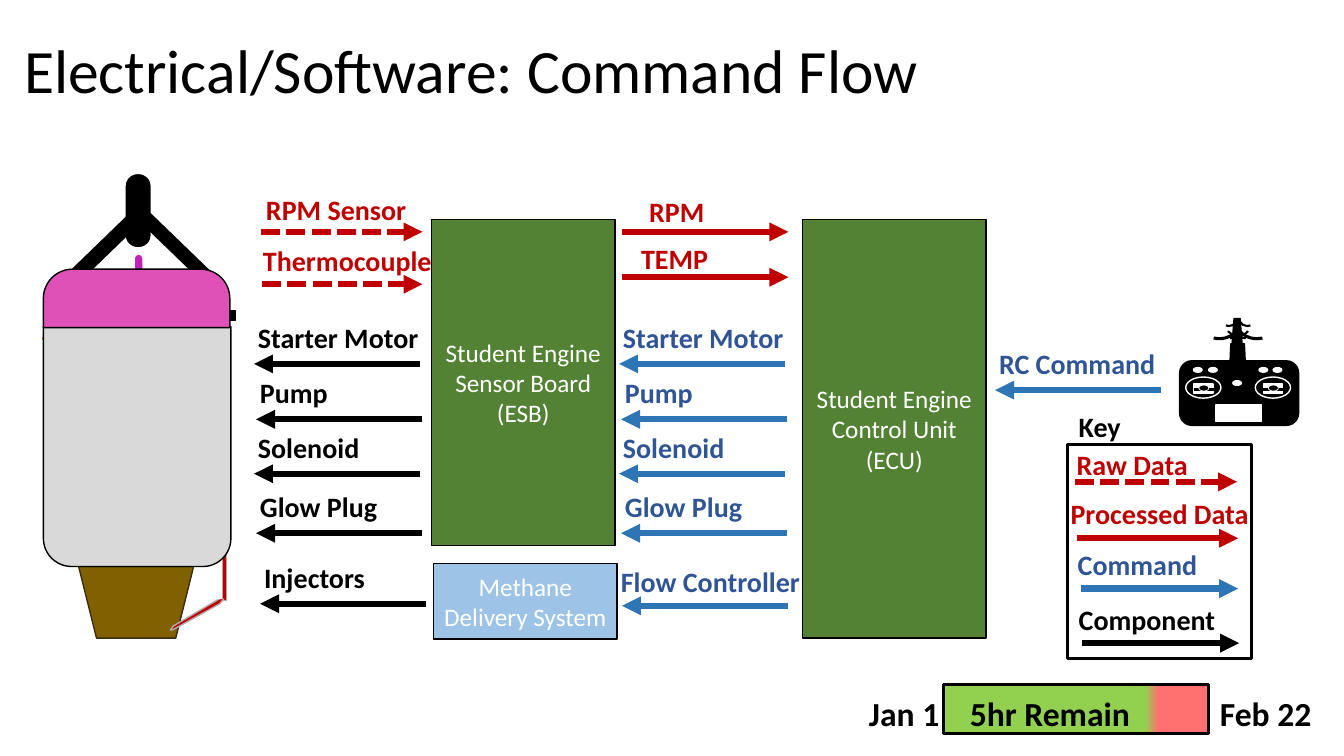
from dataclasses import dataclass
from typing import Optional

from lxml import etree
from pptx import Presentation
from pptx import util as u
from pptx.dml.color import RGBColor
from pptx.enum import dml, shapes, text
from pptx.oxml.ns import qn

BLACK = RGBColor(0x00, 0x00, 0x00)
WHITE = RGBColor(0xFF, 0xFF, 0xFF)
RED = RGBColor(0xC0, 0x00, 0x00)
BLUE = RGBColor(0x2E, 0x75, 0xB6)
NAVY = RGBColor(0x2F, 0x55, 0x97)
GREEN = RGBColor(0x54, 0x82, 0x35)
SKY = RGBColor(0x9D, 0xC3, 0xE6)
LIME = RGBColor(0x92, 0xD0, 0x50)
CORAL = RGBColor(0xFF, 0x71, 0x71)
BROWN = RGBColor(0x80, 0x60, 0x00)
DARK_BROWN = RGBColor(0x39, 0x2E, 0x13)
GOLD = RGBColor(0xBF, 0x90, 0x00)
PURPLE = RGBColor(0xC5, 0x21, 0xBD)
PINK = RGBColor(0xDF, 0x51, 0xB6)
LIGHT_GREY = RGBColor(0xD9, 0xD9, 0xD9)
GREY = RGBColor(0xAF, 0xAB, 0xAB)
FONT = "Calibri"
G = shapes.MSO_SHAPE


@dataclass
class Part:
    geom: G
    x: float
    y: float
    w: float
    h: float
    fill: Optional[RGBColor] = None
    line: Optional[RGBColor] = None
    line_w: float = 1
    rot: float = 0
    flip: str = ""
    adj: tuple = ()


@dataclass
class Signal:
    label: str
    x: float
    y: float
    w: float
    start: float
    end: float
    arrow_y: float
    color: RGBColor
    label_color: RGBColor
    dashed: bool = False


def paint(sp, fill: Optional[RGBColor], line: Optional[RGBColor], line_w: float) -> None:
    sp.shadow.inherit = False
    if fill is None:
        sp.fill.background()
    else:
        sp.fill.solid()
        sp.fill.fore_color.rgb = fill
    if line is None:
        sp.line.fill.background()
    else:
        sp.line.color.rgb = line
        sp.line.width = u.Pt(line_w)


def add_part(s, part: Part):
    sp = s.shapes.add_shape(part.geom, *map(u.Inches, (part.x, part.y, part.w, part.h)))
    paint(sp, part.fill, part.line, part.line_w)
    for i, value in enumerate(part.adj):
        sp.adjustments[i] = value
    sp.rotation = part.rot
    for axis in part.flip:
        sp.element.spPr.get_or_add_xfrm().set("flip" + axis, "1")
    return sp


def format_text(tf, size: float, color: RGBColor, bold: bool = False, align=None) -> None:
    tf.word_wrap = True
    for p in tf.paragraphs:
        p.alignment = align
        for r in p.runs:
            r.font.name, r.font.size, r.font.bold = FONT, u.Pt(size), bold
            r.font.color.rgb = color


def add_text(s, words: str, x: float, y: float, w: float, h: float,
             size: float, color: RGBColor = BLACK, bold: bool = True):
    tf = s.shapes.add_textbox(*map(u.Inches, (x, y, w, h))).text_frame
    tf.text = words
    format_text(tf, size, color, bold)
    return tf


def add_label(s, words: str, x: float, y: float, w: float, color: RGBColor) -> None:
    tf = add_text(s, words, x, y, w, 0.44, 20, color)
    tf.auto_size = text.MSO_AUTO_SIZE.SHAPE_TO_FIT_TEXT


def add_line(s, x1: float, x2: float, y: float, color: RGBColor, width: float):
    cx = s.shapes.add_connector(shapes.MSO_CONNECTOR.STRAIGHT,
                                *map(u.Inches, (x1, y, x2, y)))
    cx.line.color.rgb, cx.line.width = color, u.Pt(width)
    etree.SubElement(cx.element.spPr, qn("a:effectLst"))
    return cx


def add_signal(s, sig: Signal) -> None:
    cx = add_line(s, sig.start, sig.end, sig.arrow_y, sig.color, 4.5)
    if sig.dashed:
        cx.line.dash_style = dml.MSO_LINE.SQUARE_DOT
    etree.SubElement(cx.line._get_or_add_ln(), qn("a:tailEnd"), type="triangle")
    add_label(s, sig.label, sig.x, sig.y, sig.w, sig.label_color)


def add_block(s, words: str, part: Part) -> None:
    tf = add_part(s, part).text_frame
    tf.text = words
    tf.vertical_anchor = text.MSO_ANCHOR.MIDDLE
    format_text(tf, 18, WHITE, align=text.PP_ALIGN.CENTER)


def add_engine(s) -> None:
    add_part(s, Part(G.TRAPEZOID, 0.78, 5.62, 1.14, 0.71, BROWN, DARK_BROWN, rot=180))
    add_part(s, Part(G.RECTANGLE, 0.8, 4.51, 2.85, 0.04, RED, GREY, rot=90))
    pipe = s.shapes.build_freeform(u.Inches(2.16), u.Inches(5.95))
    bends = [(1.72, 6.21), (1.69, 6.25), (1.71, 6.25), (2.18, 5.99), (2.22, 5.94)]
    pipe.add_line_segments([(u.Inches(x), u.Inches(y)) for x, y in bends], close=False)
    paint(pipe.convert_to_shape(), RED, GREY, 1)
    for part in (
        Part(G.FLOWCHART_TERMINATOR, 1.3, 2.44, 0.06, 1.84, GOLD, WHITE, rot=90),
        Part(G.FLOWCHART_TERMINATOR, 1.22, 2.63, 0.31, 0.09, PURPLE, WHITE, rot=90),
        Part(G.FLOWCHART_TERMINATOR, 1, 1.96, 0.74, 0.26, BLACK, WHITE, rot=90),
        Part(G.DIAGONAL_STRIPE, 0.66, 2.1, 0.64, 0.62, BLACK, flip="HV", adj=(0.67,)),
        Part(G.DIAGONAL_STRIPE, 1.48, 2.1, 0.6, 0.58, BLACK, flip="V", adj=(0.67,)),
        Part(G.RECTANGLE, 2.22, 3.08, 0.11, 0.1, BLACK, BLACK),
        Part(G.ROUND_2_SAME_RECTANGLE, 0.43, 3.24, 1.86, 2.38, LIGHT_GREY, BLACK,
             rot=180, adj=(0.15, 0)),
        Part(G.ROUND_2_SAME_RECTANGLE, 0.43, 2.67, 1.85, 0.58, PINK, BLACK, adj=(0.5, 0)),
    ):
        add_part(s, part)


def add_transmitter(s) -> None:
    add_part(s, Part(G.ROUNDED_RECTANGLE, 11.7, 3.58, 1.18, 0.64, BLACK, BLACK, adj=(0.19,)))
    # Two sticks
    for x in (11.76, 12.45):
        add_part(s, Part(G.OVAL, x, 3.74, 0.35, 0.21, BLACK, WHITE))
        add_part(s, Part(G.RECTANGLE, x + 0.08, 3.81, 0.19, 0.09, WHITE, WHITE))
        add_line(s, x + 0.08, x + 0.28, 3.86, BLACK, 2.25)
        add_part(s, Part(G.OVAL, x + 0.13, 3.82, 0.1, 0.06, BLACK, WHITE, 0.5))
    # Display, buttons and antenna
    add_part(s, Part(G.RECTANGLE, 12.06, 4.02, 0.45, 0.16, WHITE, WHITE))
    for x, y in ((11.83, 3.64), (11.98, 3.64), (12.48, 3.64), (12.62, 3.64), (12.22, 3.77)):
        add_part(s, Part(G.OVAL, x, y, 0.1, 0.06, WHITE))
    add_part(s, Part(G.TRAPEZOID, 12.2, 3.41, 0.15, 0.17, BLACK, BLACK, adj=(0.05,)))
    add_part(s, Part(G.TRAPEZOID, 12.22, 3.16, 0.1, 0.26, BLACK, BLACK, adj=(0.2,)))
    # Radio waves, mirrored about the antenna; 0.6 turns degrees into adjustment units
    axis = 12.28
    for x, y, w, h, a1, a2, thick in ((12.09, 3.05, 0.2, 0.19, 117.35, 200.62, 0.11),
                                      (12, 2.92, 0.43, 0.46, 129.46, 183.84, 0.05),
                                      (11.88, 2.93, 0.43, 0.46, 123.26, 196.34, 0.07)):
        adj = (a1 * 0.6, a2 * 0.6, thick)
        add_part(s, Part(G.BLOCK_ARC, x, y, w, h, BLACK, rot=270, adj=adj))
        add_part(s, Part(G.BLOCK_ARC, 2 * axis - x - w, y, w, h, BLACK,
                         rot=90, flip="H", adj=adj))


def add_timeline(s) -> None:
    bar = add_part(s, Part(G.RECTANGLE, 9.36, 6.79, 2.63, 0.49, LIME, BLACK, 2.25))
    bar.fill.gradient()
    bar.fill.gradient_angle = 0
    for stop, position, color in zip(bar.fill.gradient_stops, (0.76, 0.81), (LIME, CORAL)):
        stop.position, stop.color.rgb = position, color
    tf = add_text(s, "Jan 1\t5hr Remain\tFeb 22", 8.52, 6.82, 4.81, 0.55, 24)
    tabs = etree.SubElement(tf.paragraphs[0]._p.get_or_add_pPr(), qn("a:tabLst"))
    for stop in (1, 3.48):
        etree.SubElement(tabs, qn("a:tab"), pos=str(u.Inches(stop)), algn="l")


def main() -> None:
    prs = Presentation()
    prs.slide_width, prs.slide_height = u.Inches(13.33), u.Inches(7.5)
    s = prs.slides.add_slide(prs.slide_layouts[6])

    tf = add_text(s, "Electrical/Software: Command Flow", 0.14, 0, 11.5, 1.45, 44, bold=False)
    tf.vertical_anchor = text.MSO_ANCHOR.MIDDLE
    tf.paragraphs[0].line_spacing = 0.9
    add_timeline(s)
    add_engine(s)
    add_transmitter(s)

    # Control units
    add_block(s, "Student Engine Control Unit\n(ECU)",
              Part(G.RECTANGLE, 7.96, 2.18, 1.82, 4.15, GREEN, BLACK))
    add_block(s, "Student Engine Sensor Board\n(ESB)",
              Part(G.RECTANGLE, 4.28, 2.18, 1.82, 3.23, GREEN, BLACK))
    add_block(s, "Methane Delivery System",
              Part(G.RECTANGLE, 4.3, 5.59, 1.82, 0.75, SKY, BLACK))

    # Commands from ECU to ESB, and on to the engine components
    commands = (("Starter Motor", 0, 3.13), ("Pump", 0.02, 3.68),
                ("Solenoid", 0, 4.22), ("Glow Plug", 0.02, 4.81))
    for left, color, label_color in ((6.08, BLUE, NAVY), (2.46, BLACK, BLACK)):
        for label, dx, y in commands:
            x = left + dx
            add_signal(s, Signal(label, x, y, 1.82, x + 1.71, x + 0.06, y + 0.48,
                                 color, label_color))

    # Sensor data, remaining commands and key
    add_part(s, Part(G.RECTANGLE, 10.59, 4.41, 1.82, 2.12, None, BLACK, 2.25))
    add_label(s, "Key", 10.6, 4.01, 1.82, BLACK)
    for sig in (
        Signal("RPM Sensor", 2.54, 1.86, 1.8, 2.59, 4.19, 2.3, RED, RED, True),
        Signal("Thermocouple", 2.51, 2.37, 2.01, 2.6, 4.19, 2.82, RED, RED, True),
        Signal("RPM", 6.34, 1.88, 1.08, 6.17, 7.82, 2.3, RED, RED),
        Signal("TEMP", 6.26, 2.35, 0.97, 6.17, 7.82, 2.75, RED, RED),
        Signal("RC Command", 9.81, 3.39, 1.82, 11.52, 9.87, 3.87, BLUE, NAVY),
        Signal("Flow Controller", 6.06, 5.55, 2.72, 7.82, 6.17, 6.01, BLUE, NAVY),
        Signal("Injectors", 2.52, 5.51, 1.82, 4.23, 2.58, 5.99, BLACK, BLACK),
        Signal("Raw Data", 10.58, 4.39, 2.1, 10.66, 12.27, 4.78, RED, RED, True),
        Signal("Processed Data", 10.52, 4.88, 2.1, 10.68, 12.28, 5.34, RED, RED),
        Signal("Command", 10.59, 5.38, 1.82, 10.72, 12.28, 5.84, BLUE, NAVY),
        Signal("Component", 10.6, 5.93, 1.82, 10.73, 12.29, 6.38, BLACK, BLACK),
    ):
        add_signal(s, sig)

    prs.save("out.pptx")


if __name__ == "__main__":
    main()
